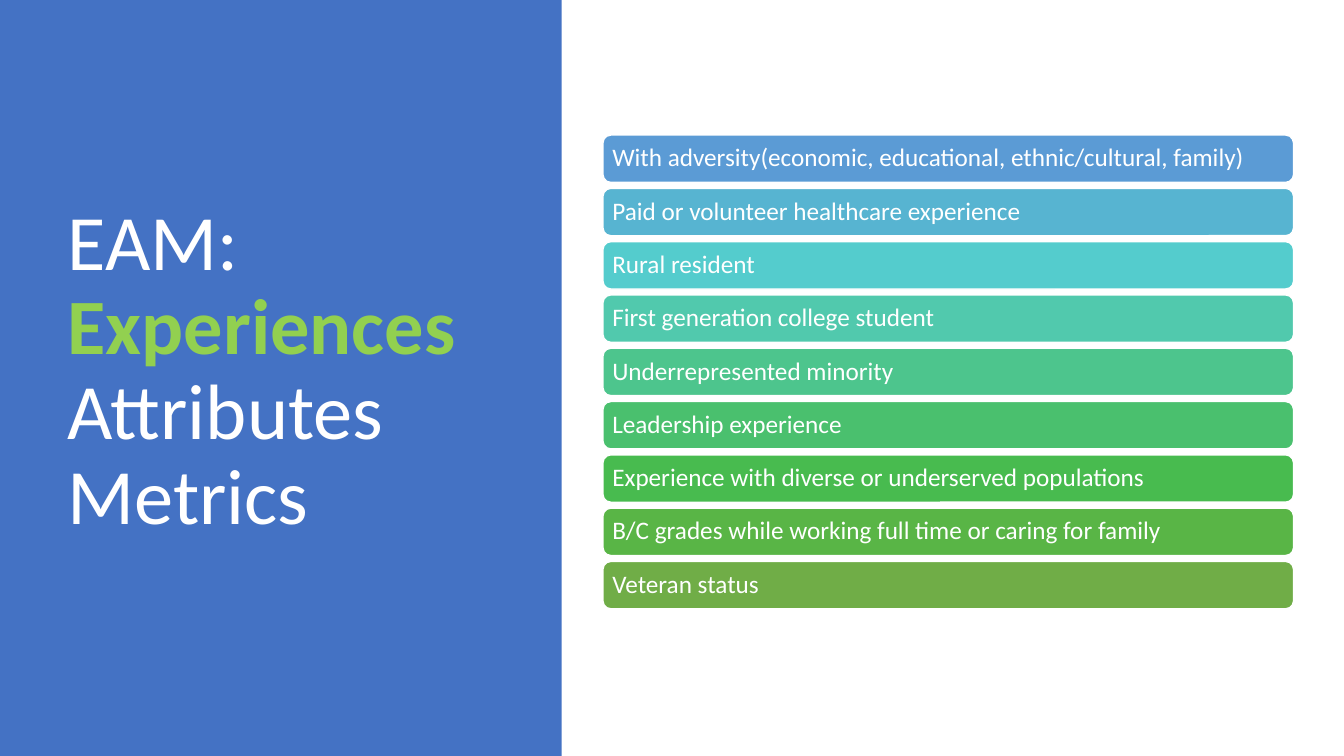
from pptx import Presentation
from pptx.dml.color import RGBColor
from pptx.enum import shapes, text
from pptx.util import Inches, Pt

WHITE = RGBColor(0xFF, 0xFF, 0xFF)
BLUE = RGBColor(0x44, 0x72, 0xC4)
LIME = RGBColor(0x92, 0xD0, 0x50)

EXPERIENCES = [
    ("With adversity(economic, educational, ethnic/cultural, family)", RGBColor(0x5B, 0x9B, 0xD5)),
    ("Paid or volunteer healthcare experience", RGBColor(0x57, 0xB4, 0xD1)),
    ("Rural resident", RGBColor(0x54, 0xCC, 0xCD)),
    ("First generation college student", RGBColor(0x51, 0xC9, 0xAD)),
    ("Underrepresented minority", RGBColor(0x4D, 0xC5, 0x8D)),
    ("Leadership experience", RGBColor(0x4A, 0xC0, 0x6E)),
    ("Experience with diverse or underserved populations", RGBColor(0x48, 0xBB, 0x4F)),
    ("B/C grades while working full time or caring for family", RGBColor(0x59, 0xB5, 0x46)),
    ("Veteran status", RGBColor(0x70, 0xAD, 0x47)),
]
FIRST_TOP, LAST_TOP = 1.34, 5.57
STEP = (LAST_TOP - FIRST_TOP) / (len(EXPERIENCES) - 1)


def apply(target, values):
    for name, value in values.items():
        setattr(target, name, value)


def add_words(paragraph, words, size, color, bold=False):
    run = paragraph.add_run()
    run.text = words
    apply(run.font, {"name": "Calibri", "size": Pt(size), "bold": bold})
    run.font.color.rgb = color


presentation = Presentation()
apply(presentation, {"slide_width": Inches(13.33), "slide_height": Inches(7.5)})
slide = presentation.slides.add_slide(presentation.slide_layouts[5])

panel = slide.shapes.add_shape(
    shapes.MSO_SHAPE.RECTANGLE, 0, 0, Inches(5.57), Inches(7.5))
panel.shadow.inherit = False
panel.fill.solid()
panel.fill.fore_color.rgb = BLUE
panel.line.fill.background()

heading = slide.shapes.title
panel.element.addnext(heading.element)
apply(heading, {"left": Inches(0.57), "top": Inches(0.68),
                "width": Inches(4.16), "height": Inches(6.02)})
apply(heading.text_frame, {"word_wrap": True, "auto_size": text.MSO_AUTO_SIZE.NONE,
                           "vertical_anchor": text.MSO_ANCHOR.MIDDLE})
lines = heading.text_frame.paragraphs[0]
apply(lines, {"alignment": text.PP_ALIGN.LEFT, "line_spacing": 0.9})
for index, word in enumerate(["EAM: ", "Experiences", "Attributes ", "Metrics"]):
    if index:
        lines.add_line_break()
    highlighted = word == "Experiences"
    add_words(lines, word, 56, LIME if highlighted else WHITE, highlighted)

for index, (experience, color) in enumerate(EXPERIENCES):
    bar = slide.shapes.add_shape(
        shapes.MSO_SHAPE.ROUNDED_RECTANGLE, Inches(5.98),
        Inches(FIRST_TOP + index * STEP), Inches(6.85), Inches(0.47))
    bar.shadow.inherit = False
    bar.fill.solid()
    bar.fill.fore_color.rgb = color
    bar.line.color.rgb = WHITE
    bar.line.width = Pt(1)
    inset = Inches(0.07)
    apply(bar.text_frame, {"word_wrap": True, "vertical_anchor": text.MSO_ANCHOR.MIDDLE,
                           "margin_left": inset, "margin_right": inset,
                           "margin_top": inset, "margin_bottom": inset})
    label = bar.text_frame.paragraphs[0]
    apply(label, {"alignment": text.PP_ALIGN.LEFT, "line_spacing": 0.9})
    add_words(label, experience, 18, WHITE)

presentation.save("out.pptx")
